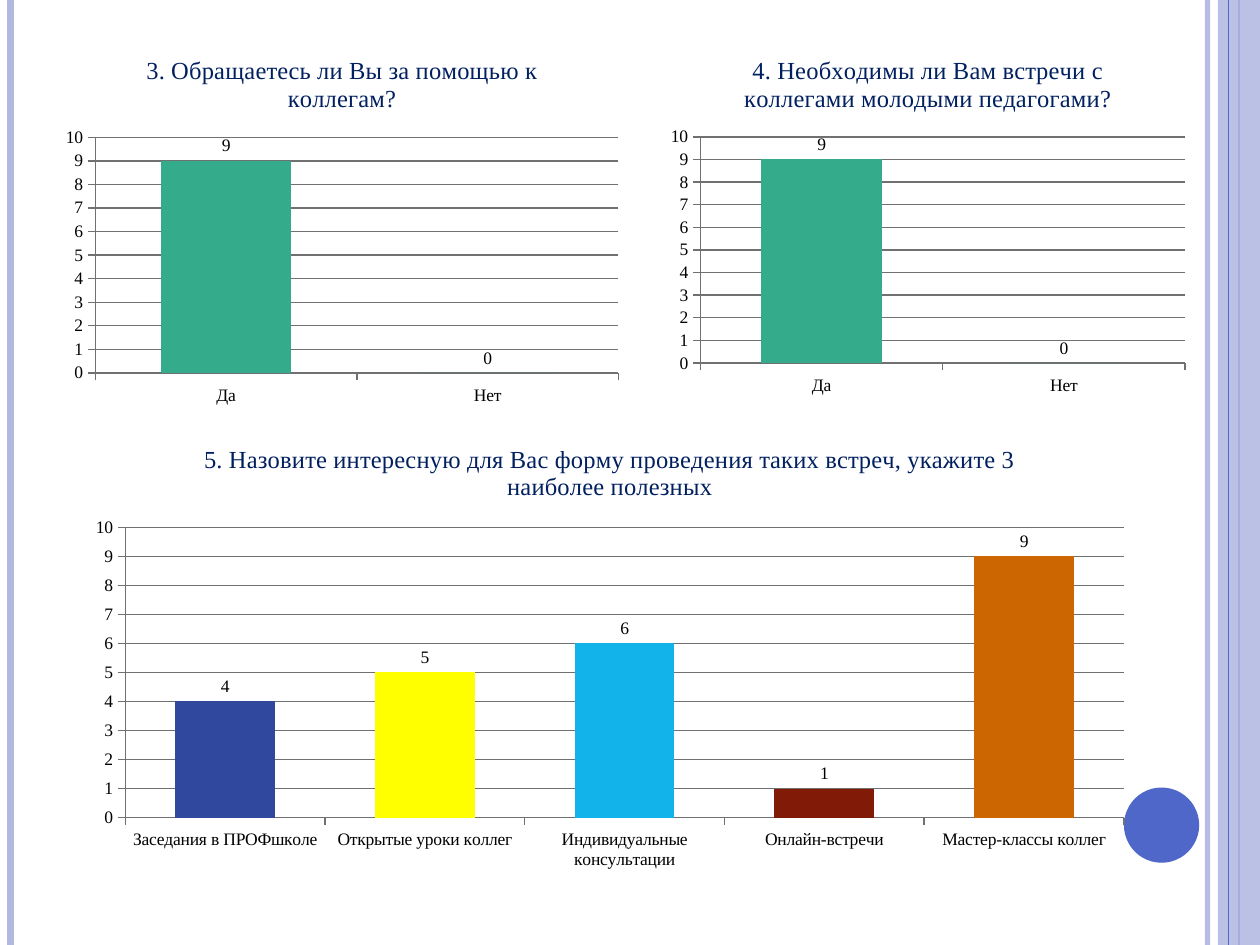
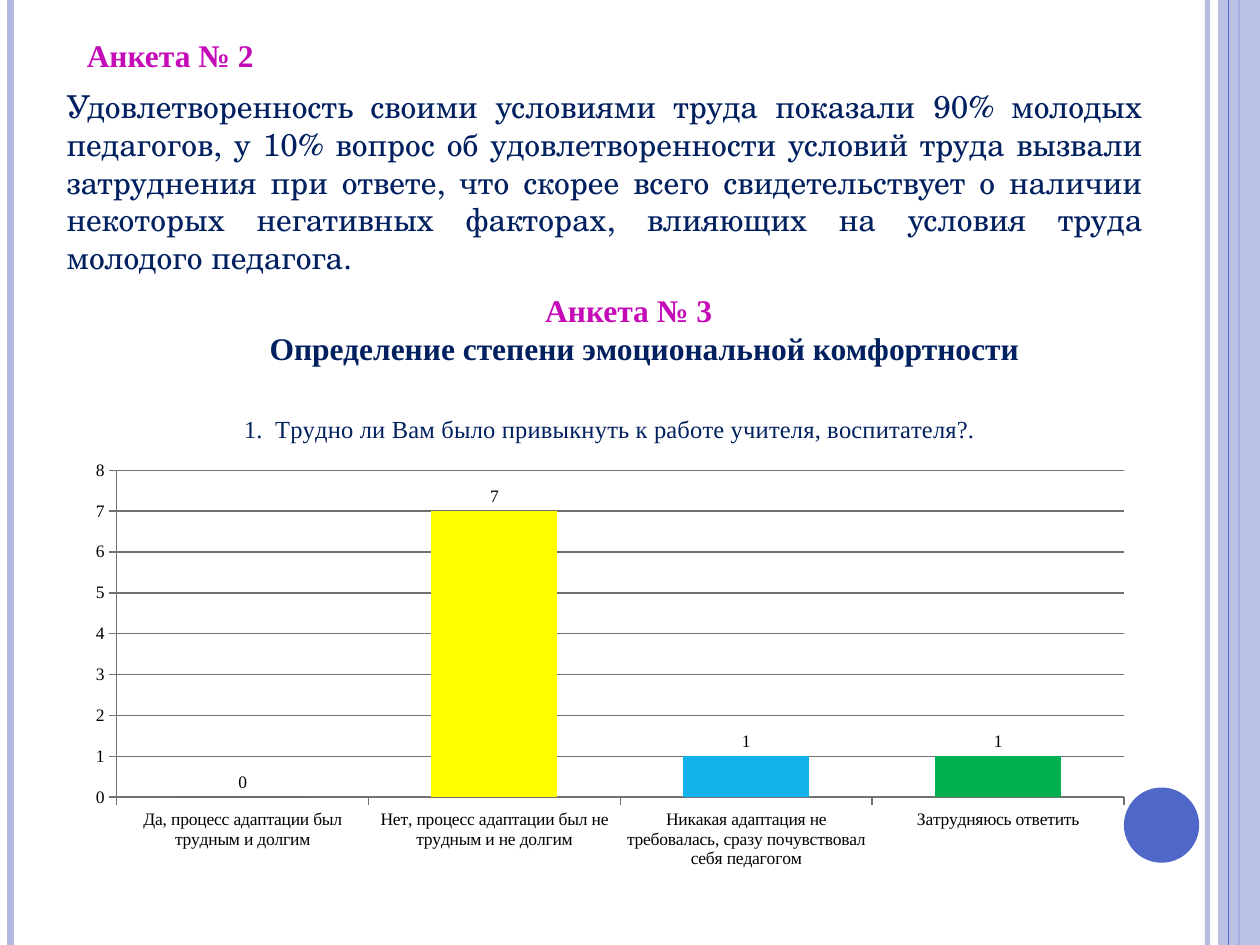
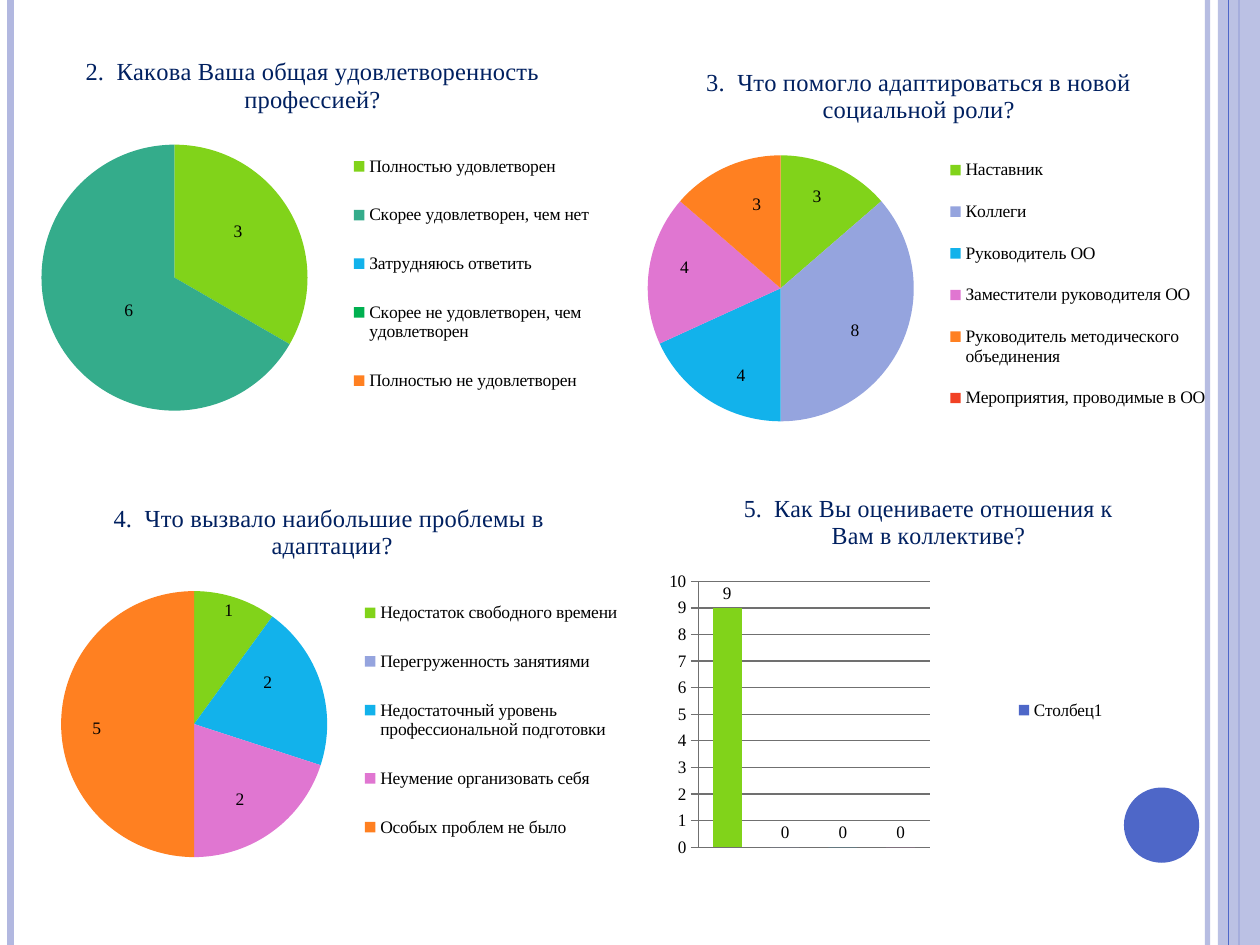
from lxml import etree
from pptx import Presentation, util as u
from pptx.chart.data import CategoryChartData
from pptx.dml.color import RGBColor
from pptx.enum import chart as ch, shapes, text
from pptx.oxml import parse_xml
from pptx.oxml.ns import nsdecls, qn

Pt = u.Pt
INK = {
    "blue": "4E67C8", "pale": "B2B8E0", "navy": "002060", "pink": "C50BB8",
    "black": "000000", "grid": "707070", "teal": "34AC8B", "deep": "31489F",
    "gold": "FFFF00", "sky": "12B2EB", "wine": "821A08", "rust": "CC6600",
    "green": "00B050", "lime": "81D31A", "lilac": "95A4DE", "rose": "E076D1",
    "orange": "FF8021", "red": "F14124",
}
SERIF = "Times New Roman"
BOOK = "TeX Gyre Schola"
PLOT = {"x": 0.034, "y": 0.261, "w": 0.468, "h": 0.638}
KEY = {"x": 0.534, "y": 0.22, "w": 0.466, "h": 0.7}
COLUMN = ch.XL_CHART_TYPE.COLUMN_CLUSTERED
PIE = ch.XL_CHART_TYPE.PIE
SPOT = ch.XL_LABEL_POSITION


class Deck:
    def __init__(self):
        self.prs = Presentation()
        self.prs.slide_width, self.prs.slide_height = Pt(720), Pt(540)
        self.slide = None

    def page(self):
        self.slide = self.prs.slides.add_slide(self.prs.slide_layouts[6])
        self.rule(690, "pale", 3, 93)
        self.rule(6, "pale", 4.5)
        self.rule(708, "blue", 1.5)
        self.shape(shapes.MSO_SHAPE.RECTANGLE, (696, 0, 24, 540), "pale", 87)
        self.rule(702, "blue", 0.75)
        self.shape(shapes.MSO_SHAPE.OVAL, (642.25, 450, 43, 43), "blue")

    def tint(self, fill, name, alpha=100):
        fill.solid()
        fill.fore_color.rgb = RGBColor.from_string(INK[name])
        if alpha < 100:
            node = fill._xPr.find(".//" + qn("a:srgbClr"))
            etree.SubElement(node, qn("a:alpha"), val=str(alpha * 1000))

    def rule(self, x, name, width, alpha=100):
        line = self.slide.shapes.add_connector(
            shapes.MSO_CONNECTOR.STRAIGHT, Pt(x), Pt(0), Pt(x), Pt(540))
        line.line.width = Pt(width)
        self.tint(line.line.fill, name, alpha)
        etree.SubElement(line._element.spPr, qn("a:effectLst"))

    def shape(self, kind, box, name, alpha=100):
        item = self.slide.shapes.add_shape(kind, *map(Pt, box))
        item.shadow.inherit = False
        item.line.fill.background()
        self.tint(item.fill, name, alpha)

    def font(self, font, size, name, face=SERIF, bold=False):
        font.size, font.name, font.bold = Pt(size), face, bold
        font.color.rgb = RGBColor.from_string(INK[name])

    def text(self, box, rows, align="LEFT", face=SERIF, bold=True, wrap=True):
        frame = self.slide.shapes.add_textbox(*map(Pt, box)).text_frame
        frame.word_wrap = wrap
        for i, (words, name, inset) in enumerate(rows):
            para = frame.add_paragraph() if i else frame.paragraphs[0]
            para.alignment = text.PP_ALIGN[align]
            if inset:
                para._p.get_or_add_pPr().set("marL", str(Pt(inset)))
            run = para.add_run()
            run.text = words
            self.font(run.font, 18, name, face, bold)

    def chart(self, kind, box, title, rows, series="Series 1", legend=False,
              spot=SPOT.OUTSIDE_END):
        data = CategoryChartData()
        data.categories = [row[0] for row in rows]
        data.add_series(series, [row[1] for row in rows])
        chart = self.slide.shapes.add_chart(kind, *map(Pt, box), data).chart
        self.font(chart.font, 10, "black")
        chart.has_title = True
        run = chart.chart_title.text_frame.paragraphs[0].add_run()
        run.text = title
        self.font(run.font, 14, "navy")
        chart.chart_title.include_in_layout = False
        chart.has_legend = legend
        if legend:
            chart.legend.position = ch.XL_LEGEND_POSITION.RIGHT
            chart.legend.include_in_layout = False
            area = chart.element.find(".//" + qn("c:plotArea"))
            self.place(area, 0, PLOT, "edge", "inner")
            self.place(chart.legend._element, 1, KEY, "edge")
        plot = chart.plots[0]
        plot.vary_by_categories = kind == PIE
        bars = plot.series[0]
        self.tags(bars.data_labels, kind, spot)
        if kind == COLUMN:
            plot.gap_width = 100
            bars.invert_if_negative = False
            self.tint(bars.format.fill, "blue")
            self.axes(chart, max(row[1] for row in rows) + 1)
        for i, (_, _, name, *shift) in enumerate(rows):
            point = bars.points[i]
            self.tint(point.format.fill, name)
            if shift:
                point.data_label.position = spot
                tag = bars.data_labels._element.findall(qn("c:dLbl"))[-1]
                self.place(tag, 1, dict(zip("xy", shift)))
        return chart

    def tags(self, tags, kind, spot):
        tags.show_value, tags.show_percentage = True, False
        tags.position = spot
        tags.number_format = "0;;;" if kind == PIE else "0"
        tags.number_format_is_linked = False
        for lead in tags._element.findall(qn("c:showLeaderLines")):
            lead.set("val", "0")

    def axes(self, chart, top):
        axis = chart.value_axis
        axis.minimum_scale, axis.maximum_scale, axis.major_unit = 0, top, 1
        axis.has_major_gridlines = True
        for part in (axis, axis.major_gridlines, chart.category_axis):
            part.format.line.width = Pt(0.8)
            self.tint(part.format.line.fill, "grid")

    def place(self, node, at, sizes, mode=None, target=None):
        for old in node.findall(qn("c:layout")):
            node.remove(old)
        parts = [("layoutTarget", target)] if target else []
        parts += [(k + "Mode", mode) for k in "xy" if mode]
        parts += sizes.items()
        body = "".join(f'<c:{k} val="{v}"/>' for k, v in parts)
        node.insert(at, parse_xml(
            f'<c:layout {nsdecls("c")}><c:manualLayout>{body}'
            '</c:manualLayout></c:layout>'))


def needs(deck):
    deck.page()
    votes = [("Да", 9, "teal"), ("Нет", 0, "teal")]
    deck.chart(COLUMN, (31, 20.5, 329, 215.3),
               "3. Обращаетесь ли Вы за помощью к коллегам?", votes)
    deck.chart(COLUMN, (377.3, 20.5, 306, 209.5),
               "4. Необходимы ли Вам встречи с коллегами молодыми педагогами?", votes)
    deck.chart(
        COLUMN, (42.5, 241.5, 612, 260.6),
        "5. Назовите интересную для Вас форму проведения таких встреч, "
        "укажите 3 наиболее полезных",
        [("Заседания в ПРОФшколе", 4, "deep"),
         ("Открытые уроки коллег", 5, "gold"),
         ("Индивидуальные консультации", 6, "sky"),
         ("Онлайн-встречи", 1, "wine"),
         ("Мастер-классы коллег", 9, "rust")])


def comfort(deck):
    deck.page()
    deck.text(
        (31, 46.2, 629.3, 116.6),
        [("Удовлетворенность своими условиями труда показали 90% молодых "
          "педагогов, у 10% вопрос об удовлетворенности условий труда вызвали "
          "затруднения при ответе, что скорее всего свидетельствует о наличии "
          "некоторых негативных факторах, влияющих на условия труда молодого "
          "педагога.", "navy", 0)],
        "JUSTIFY", BOOK, False)
    deck.text((42.5, 17.3, 115, 29), [("Анкета № 2", "pink", 0)], wrap=False)
    deck.text((122, 162.7, 474.5, 51),
              [("Анкета № 3", "pink", 0),
               ("Определение степени эмоциональной комфортности", "navy", 18)],
              "CENTER")
    deck.chart(
        COLUMN, (42.5, 224, 612, 278),
        "1.  Трудно ли Вам было привыкнуть к работе учителя, воспитателя?.",
        [("Да, процесс адаптации был трудным и долгим", 0, "deep"),
         ("Нет, процесс адаптации был не трудным и не долгим", 7, "gold"),
         ("Никакая адаптация не требовалась, сразу почувствовал себя педагогом",
          1, "sky"),
         ("Затрудняюсь ответить", 1, "green")])


def roles(deck):
    deck.page()
    deck.chart(
        PIE, (8.6, 20.5, 340, 238.3),
        "2.  Какова Ваша общая удовлетворенность профессией?",
        [("Полностью удовлетворен", 3, "lime", 0.01, -0.03),
         ("Скорее удовлетворен, чем нет", 6, "teal", 0.02, 0),
         ("Затрудняюсь ответить", 0, "sky"),
         ("Скорее не удовлетворен, чем удовлетворен", 0, "green"),
         ("Полностью не удовлетворен", 0, "orange")],
        legend=True, spot=SPOT.CENTER)
    marks = deck.chart(
        COLUMN, (382.5, 270, 289.4, 238.3),
        "5.  Как Вы оцениваете отношения к Вам в коллективе?",
        [("1", 9, "lime"), ("2", 0, "lilac"), ("3", 0, "sky"), ("4", 0, "rose")],
        "Столбец1", legend=True)
    marks.category_axis.visible = False
    deck.chart(
        PIE, (19.8, 275.6, 340, 238.3),
        "4.  Что вызвало наибольшие проблемы в  адаптации?",
        [("Недостаток свободного времени", 1, "lime", 0, -0.01),
         ("Перегруженность занятиями", 0, "lilac"),
         ("Недостаточный уровень профессиональной подготовки", 2, "sky",
          -0.07, -0.03),
         ("Неумение организовать себя", 2, "rose", -0.04, -0.04),
         ("Особых проблем не было", 5, "orange", 0.04, 0.01)],
        legend=True, spot=SPOT.INSIDE_END)
    deck.chart(
        PIE, (355, 26.6, 340, 238.3),
        "3.  Что помогло адаптироваться в новой социальной роли?",
        [("Наставник", 3, "lime", -0.02, 0.03),
         ("Коллеги", 8, "lilac", -0.06, 0),
         ("Руководитель ОО", 4, "sky", 0.04, -0.02),
         ("Заместители руководителя ОО", 4, "rose", 0.04, -0.03),
         ("Руководитель методического объединения", 3, "orange", 0.04, 0.05),
         ("Мероприятия, проводимые в ОО", 0, "red")],
        legend=True, spot=SPOT.INSIDE_END)


def main():
    deck = Deck()
    for build in (needs, comfort, roles):
        build(deck)
    deck.prs.save("out.pptx")


if __name__ == "__main__":
    main()
